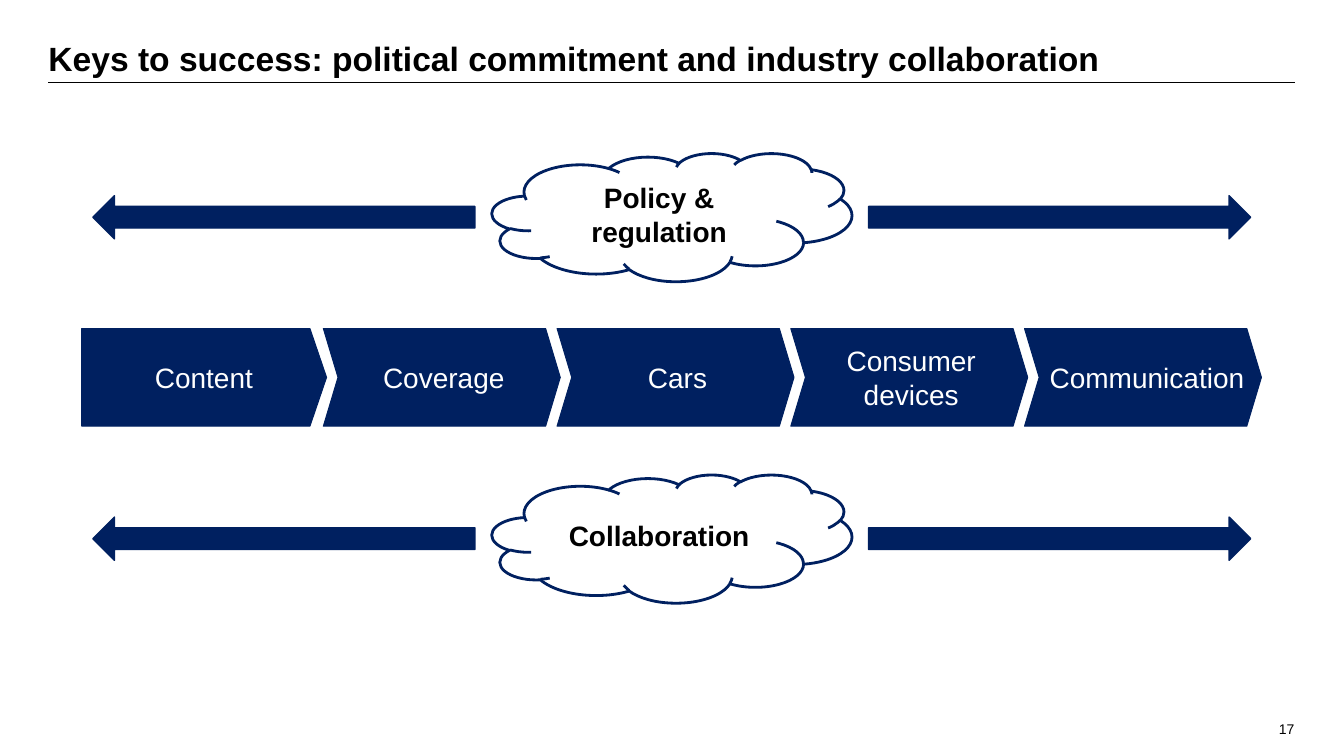
from lxml import etree
from pptx import Presentation
from pptx.dml.color import RGBColor
from pptx.enum import shapes, text
from pptx.oxml import ns
from pptx.util import Cm, Pt

NAVY = RGBColor(0x00, 0x20, 0x60)
WHITE = RGBColor(0xFF, 0xFF, 0xFF)
BLACK = RGBColor(0x00, 0x00, 0x00)
KIND = shapes.MSO_SHAPE
ALIGN = text.PP_ALIGN
ANCHOR = text.MSO_ANCHOR

deck = Presentation()
deck.slide_width, deck.slide_height = Cm(33.87), Cm(19.05)
slide = deck.slides.add_slide(deck.slide_layouts[6])


def write(shape, words, size, color, bold, align, anchor, pads):
    """Put one paragraph into a shape; pads are left, top, right, bottom."""
    frame = shape.text_frame
    sides = ("margin_left", "margin_top", "margin_right", "margin_bottom")
    format = dict(zip(sides, map(Cm, pads)), word_wrap=True,
                  vertical_anchor=anchor)
    for name, value in format.items():
        setattr(frame, name, value)
    para = frame.paragraphs[0]
    para.alignment = align
    run = para.add_run()
    run.text = words
    font = {"name": "Arial", "size": Pt(size), "bold": bold}
    for name, value in font.items():
        setattr(run.font, name, value)
    run.font.color.rgb = color
    return para


def draw(kind, left, top, width, height, fill, weight):
    """Add a navy-edged shape without a shadow."""
    shape = slide.shapes.add_shape(kind, *map(Cm, (left, top, width, height)))
    shape.shadow.inherit = False
    shape.fill.solid()
    shape.fill.fore_color.rgb = fill
    shape.line.color.rgb = NAVY
    shape.line.width = Pt(weight)
    return shape


# Title, rule and page number
title = slide.shapes.add_textbox(Cm(1.22), Cm(0.76), Cm(31.42), Cm(1.32))
para = write(title, "Keys to success: political commitment and industry collaboration",
             24, BLACK, True, ALIGN.LEFT, ANCHOR.BOTTOM, (0, 0.1, 0, 0.1))
para.line_spacing = 0.9

rule = slide.shapes.add_connector(shapes.MSO_CONNECTOR.STRAIGHT,
                                  Cm(1.22), Cm(2.08), Cm(32.64), Cm(2.08))
rule.line.color.rgb = BLACK
rule.line.width = Pt(1)
etree.SubElement(rule._element.spPr, ns.qn("a:effectLst"))

page = slide.shapes.add_textbox(Cm(30.48), Cm(18.03), Cm(2.39), Cm(0.69))
write(page, "17", 10, BLACK, False, ALIGN.RIGHT, ANCHOR.TOP,
      (0.25, 0.13, 0.25, 0.13))

# Clouds with an arrow on either side
for label, top in (("Policy & regulation", 3.86), ("Collaboration", 11.96)):
    cloud = draw(KIND.CLOUD, 12.4, top, 9.07, 3.23, WHITE, 2)
    write(cloud, label, 20, BLACK, True, ALIGN.CENTER, ANCHOR.MIDDLE, [0.2] * 4)
    for kind, left in ((KIND.LEFT_ARROW, 2.34), (KIND.RIGHT_ARROW, 21.89)):
        draw(kind, left, top + 1.07, 9.63, 1.09, NAVY, 1)

# Value chain: a pentagon, then evenly spaced chevrons
chain = ("Content", "Coverage", "Cars", "Consumer devices", "Communication")
for i, label in enumerate(chain):
    if i == 0:
        step = draw(KIND.PENTAGON, 2.06, 8.28, 6.17, 2.46, NAVY, 0.75)
        step.adjustments[0] = 0.17
    else:
        step = draw(KIND.CHEVRON, 2.26 + 5.89 * i, 8.28, 5.97, 2.46, NAVY, 0.75)
        step.adjustments[0] = 0.15
    ends = i in (0, len(chain) - 1)
    pads = (0.2, 0.13, 0, 0.13) if ends else (0.3, 0.13, 0.2, 0.13)
    write(step, label, 20, WHITE, False, ALIGN.CENTER, ANCHOR.MIDDLE, pads)

deck.save("out.pptx")
